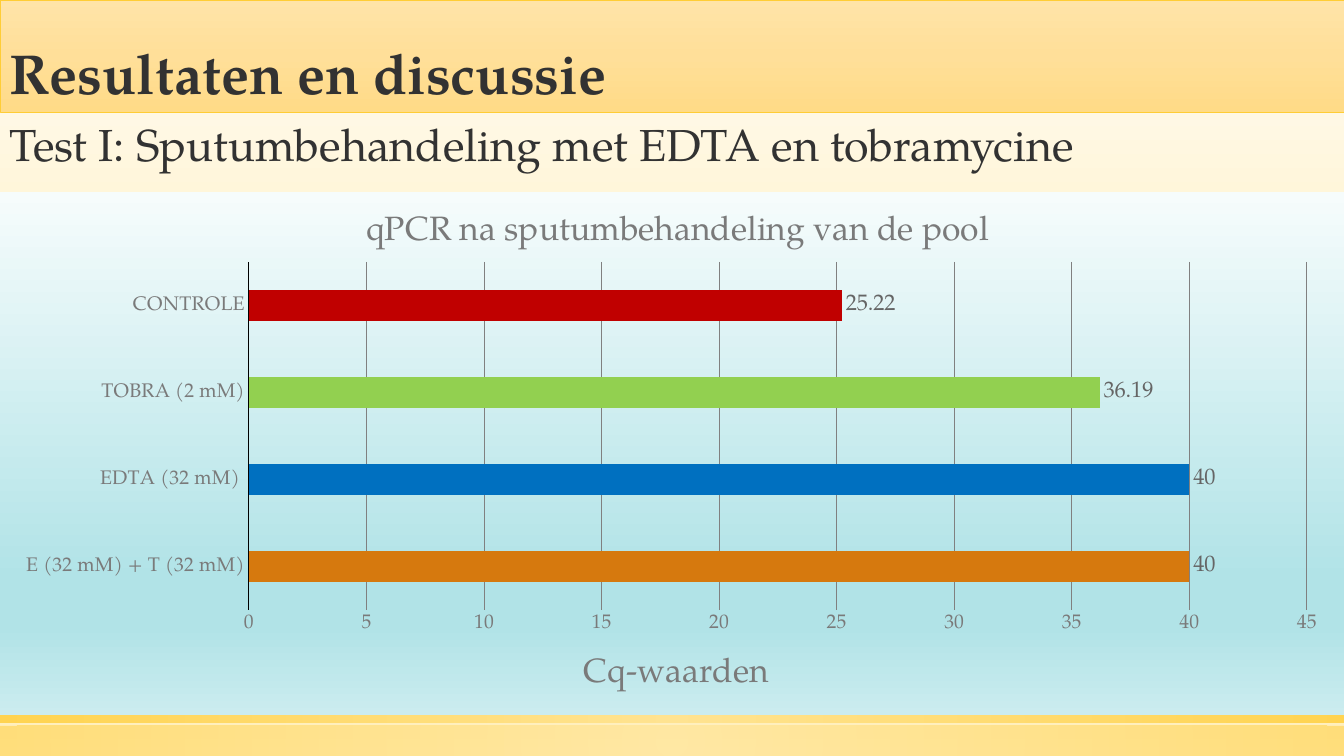
"""Build the slide with the qPCR results of the sputum treatment."""
import lxml.etree
import pptx
import pptx.chart.data
import pptx.dml.color
import pptx.enum.chart
import pptx.enum.shapes
import pptx.enum.text
import pptx.oxml
import pptx.oxml.ns
import pptx.util

PX = 914400 / 100.8
WIDTH, HEIGHT = 1344, 756
CHART_TOP, CHART_HEIGHT = 192, 523
FONT = "TeX Gyre Pagella"
DARK, GREY = "323232", "7A7A7A"
qn = pptx.oxml.ns.qn


def style(font, size, colour, bold=False):
    font.name, font.size, font.bold = FONT, pptx.util.Pt(size), bold
    font.color.rgb = pptx.dml.color.RGBColor.from_string(colour)


def set_gradient(properties, stops, opacity=100, circle=False):
    marks = "".join(
        f'<a:gs pos="{position * 1000}"><a:srgbClr val="{colour}">'
        f'<a:alpha val="{opacity * 1000}"/></a:srgbClr></a:gs>'
        for position, colour in stops)
    direction = ('<a:path path="circle"><a:fillToRect l="50000" t="50000" r="50000" b="50000"/></a:path>'
                 if circle else '<a:lin ang="5400000" scaled="0"/>')
    gradient = pptx.oxml.parse_xml(
        f'<a:gradFill {pptx.oxml.ns.nsdecls("a")} rotWithShape="1">'
        f'<a:gsLst>{marks}</a:gsLst>{direction}</a:gradFill>')
    properties.replace(properties.find(qn("a:solidFill")), gradient)


presentation = pptx.Presentation()
presentation.slide_width = round(WIDTH * PX)
presentation.slide_height = round(HEIGHT * PX)
slide = presentation.slides.add_slide(presentation.slide_layouts[6])

slide.background.fill.solid()
set_gradient(slide.element.find(".//" + qn("p:bgPr")),
             [(0, "FFFCF5"), (74, "FFE9A5"), (83, "FFE9A5"), (100, "FFF0C3")])

footer_stops = [(0, "FFE186"), (100, "FFCD36")]
title_stops = [(0, "FFE4A8"), (50, "FFDF99"), (100, "FFDB87")]
for top, height, stops, opacity, circle in [
        (726, 30, footer_stops, 50, True),
        (715, 8, footer_stops, 80, True),
        (0, 112, title_stops, 100, False)]:
    band = slide.shapes.add_shape(pptx.enum.shapes.MSO_SHAPE.RECTANGLE,
                                  0, round(top * PX), round(WIDTH * PX), round(height * PX))
    band.shadow.inherit = False
    band.line.fill.background()
    band.fill.solid()
    set_gradient(band.element.spPr, stops, opacity, circle)

band.line.color.rgb = pptx.dml.color.RGBColor.from_string("FFCD36")
band.line.width = pptx.util.Pt(0.5)
band.text_frame.vertical_anchor = pptx.enum.text.MSO_ANCHOR.BOTTOM
subtitle = slide.shapes.add_textbox(0, round(112 * PX), round(1102 * PX), round(64 * PX))
for shape, text, size, bold in [
        (band, "Resultaten en discussie", 40, True),
        (subtitle, "Test I: Sputumbehandeling met EDTA en tobramycine", 32, False)]:
    shape.text_frame.word_wrap = True
    paragraph = shape.text_frame.paragraphs[0]
    paragraph.text = text
    paragraph.alignment = pptx.enum.text.PP_ALIGN.LEFT
    style(paragraph.font, size, DARK, bold)
band.text_frame.paragraphs[0].line_spacing = 0.9

treatments = [("E (32 mM) + T (32 mM)", 40, "D6790E"), ("EDTA (32 mM) ", 40, "0070C0"),
              ("TOBRA (2 mM)", 36.19, "92D050"), ("CONTROLE", 25.22, "C00000")]
chart_data = pptx.chart.data.CategoryChartData()
chart_data.categories = [name for name, value, colour in treatments]
chart_data.add_series("Cq-waarden", [value for name, value, colour in treatments])
chart = slide.shapes.add_chart(
    pptx.enum.chart.XL_CHART_TYPE.BAR_CLUSTERED, 0, round(CHART_TOP * PX),
    round(WIDTH * PX), round(CHART_HEIGHT * PX), chart_data).chart
style(chart.font, 10, DARK)
chart.has_legend = False

chart_properties = pptx.oxml.parse_xml(
    f'<c:spPr {pptx.oxml.ns.nsdecls("c", "a")}><a:solidFill/><a:ln><a:noFill/></a:ln></c:spPr>')
set_gradient(chart_properties, [(0, "F6FCFC"), (74, "B1E3E7"), (83, "B1E3E7"), (100, "CBECEF")])
chart_space = chart.element
chart_space.find(qn("c:chart")).addnext(chart_properties)

plot = chart.plots[0]
plot.gap_width = 182
plot.vary_by_categories = False
for index, (name, value, colour) in enumerate(treatments):
    fill = plot.series[0].points[index].format.fill
    fill.solid()
    fill.fore_color.rgb = pptx.dml.color.RGBColor.from_string(colour)
plot.has_data_labels = True
labels = plot.data_labels
labels.show_value = True
labels.position = pptx.enum.chart.XL_LABEL_POSITION.OUTSIDE_END
style(labels.font, 16, "656565")

category_axis, value_axis = chart.category_axis, chart.value_axis
for axis in (category_axis, value_axis):
    axis.major_tick_mark = pptx.enum.chart.XL_TICK_MARK.NONE
    axis.minor_tick_mark = pptx.enum.chart.XL_TICK_MARK.NONE
    style(axis.tick_labels.font, 14, GREY)
value_axis.minimum_scale, value_axis.maximum_scale, value_axis.major_unit = 0, 45, 5
value_axis.format.line.fill.background()
for line, colour in [(category_axis.format.line, "000000"),
                     (value_axis.major_gridlines.format.line, "808080")]:
    line.color.rgb = pptx.dml.color.RGBColor.from_string(colour)
    line.width = pptx.util.Pt(0.75)

for owner, text in [(chart, "qPCR na sputumbehandeling van de pool"), (value_axis, "Cq-waarden")]:
    owner.has_title = True
    frame = (chart.chart_title if owner is chart else value_axis.axis_title).text_frame
    frame.text = text
    style(frame.paragraphs[0].font, 24, GREY)

title = chart_space.find(f'{qn("c:chart")}/{qn("c:title")}')
axis_title = chart_space.find(f'.//{qn("c:valAx")}/{qn("c:title")}')
plot_area = chart_space.find(".//" + qn("c:plotArea"))
for element, left, top, size in [(title, 360, 206, None), (axis_title, 578, 648, None),
                                 (plot_area, 249, 262, (1058, 348))]:
    for layout in element.findall(qn("c:layout")):
        element.remove(layout)
    layout = lxml.etree.Element(qn("c:layout"))
    manual = lxml.etree.SubElement(layout, qn("c:manualLayout"))
    settings = [("xMode", "edge"), ("yMode", "edge"),
                ("x", left / WIDTH), ("y", (top - CHART_TOP) / CHART_HEIGHT)]
    if size:
        settings = [("layoutTarget", "inner")] + settings
        settings += [("w", size[0] / WIDTH), ("h", size[1] / CHART_HEIGHT)]
    for tag, setting in settings:
        lxml.etree.SubElement(manual, qn("c:" + tag)).set("val", str(setting))
    element.insert(0 if size else 1, layout)

presentation.save("out.pptx")
